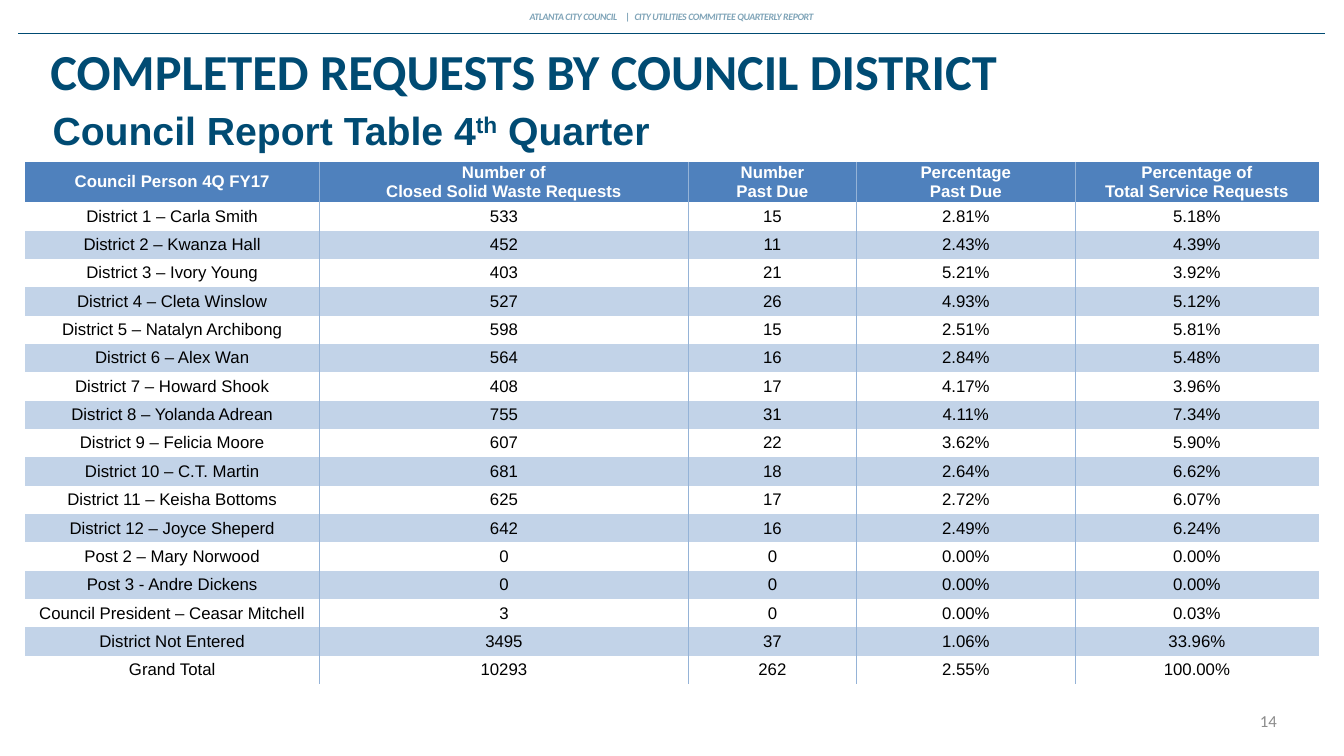
from lxml.etree import SubElement
from pptx import Presentation
from pptx.dml.color import RGBColor
from pptx.enum.shapes import MSO_CONNECTOR
from pptx.enum.text import MSO_ANCHOR, PP_ALIGN
from pptx.oxml.ns import qn
from pptx.util import Cm, Pt

# Content
TITLE = "COMPLETED REQUESTS BY COUNCIL DISTRICT"
SUBTITLE = [("Council Report Table 4", 0), ("th", 30000), (" Quarter", 0)]
# Running head: text and letter spacing in hundredths of a point
RUNNING_HEAD = [
    ("ATLANTA CITY COUNCIL", -25),
    (" ", 450),
    ("| ", 70),
    ("CITY UTILITIES COMMITTEE QUARTERLY REPORT", -25),
]
PAGE_NUMBER = "14"
HEADERS = [
    "Council Person 4Q FY17",
    "Number of\nClosed Solid Waste Requests",
    "Number\nPast Due",
    "Percentage\nPast Due",
    "Percentage of\nTotal Service Requests",
]
ROWS = [
    ("District 1 – Carla Smith", "533", "15", "2.81%", "5.18%"),
    ("District 2 – Kwanza Hall", "452", "11", "2.43%", "4.39%"),
    ("District 3 – Ivory Young", "403", "21", "5.21%", "3.92%"),
    ("District 4 – Cleta Winslow", "527", "26", "4.93%", "5.12%"),
    ("District 5 – Natalyn Archibong", "598", "15", "2.51%", "5.81%"),
    ("District 6 – Alex Wan", "564", "16", "2.84%", "5.48%"),
    ("District 7 – Howard Shook", "408", "17", "4.17%", "3.96%"),
    ("District 8 – Yolanda Adrean", "755", "31", "4.11%", "7.34%"),
    ("District 9 – Felicia Moore", "607", "22", "3.62%", "5.90%"),
    ("District 10 – C.T. Martin", "681", "18", "2.64%", "6.62%"),
    ("District 11 – Keisha Bottoms", "625", "17", "2.72%", "6.07%"),
    ("District 12 – Joyce Sheperd", "642", "16", "2.49%", "6.24%"),
    ("Post 2 – Mary Norwood", "0", "0", "0.00%", "0.00%"),
    ("Post 3 - Andre Dickens", "0", "0", "0.00%", "0.00%"),
    ("Council President – Ceasar Mitchell", "3", "0", "0.00%", "0.03%"),
    ("District Not Entered", "3495", "37", "1.06%", "33.96%"),
    ("Grand Total", "10293", "262", "2.55%", "100.00%"),
]

# Look
NAVY, HEAD_BLUE, BAND_BLUE, RULE_BLUE = "004B73", "4F81BD", "C2D3E8", "95B3D7"
PALE_NAVY, GREY, WHITE, BLACK = "7FA4B8", "8C8C8C", "FFFFFF", "000000"
COLUMN_WIDTHS = [Cm(7.42), Cm(9.3), Cm(4.23), Cm(5.52), Cm(6.13)]
HEADER_HEIGHT, BODY_HEIGHT = Cm(0.97), Cm(12.14)
PLAIN_TABLE_STYLE = "{2D5ABB26-0587-4C30-8999-92F81FD0307C}"


def colour(value):
    return RGBColor.from_string(value)


def style(para, font_name, size, ink, bold=False, italic=False, align=PP_ALIGN.LEFT):
    para.alignment = align
    para.space_before = Pt(0)
    font = para.font
    font.name, font.size = font_name, Pt(size)
    font.bold, font.italic = bold, italic
    font.color.rgb = colour(ink)


def place(shape, left, top, width, height):
    shape.left, shape.top = Cm(left), Cm(top)
    shape.width, shape.height = Cm(width), Cm(height)


def clear_margins(frame):
    frame.margin_left = frame.margin_right = 0
    frame.margin_top = frame.margin_bottom = 0


def add_spans(para, spans, attribute):
    for text, value in spans:
        span = para.add_run()
        span.text = text
        if value:
            span._r.get_or_add_rPr().set(attribute, str(value))


def add_label(page, left, top, width, height):
    box = page.shapes.add_textbox(Cm(left), Cm(top), Cm(width), Cm(height))
    box.text_frame.word_wrap = True
    clear_margins(box.text_frame)
    return box.text_frame


def add_border(cell, side):
    line = SubElement(cell._tc.get_or_add_tcPr(), qn(f"a:{side}"), w=str(Pt(0.5)))
    fill = SubElement(line, qn("a:solidFill"))
    SubElement(fill, qn("a:srgbClr"), val=RULE_BLUE)


def fill_cell(cell, text, row, column):
    cell.text = text
    clear_margins(cell)
    cell.vertical_anchor = MSO_ANCHOR.MIDDLE
    is_header = row == 0
    for para in cell.text_frame.paragraphs:
        style(para, "Arial", 12, WHITE if is_header else BLACK,
              bold=is_header, align=PP_ALIGN.CENTER)
    # Rules only between columns
    if column > 0:
        add_border(cell, "lnL")
    if column < len(HEADERS) - 1:
        add_border(cell, "lnR")
    if is_header or row % 2 == 0:
        cell.fill.solid()
        cell.fill.fore_color.rgb = colour(HEAD_BLUE if is_header else BAND_BLUE)
    else:
        cell.fill.background()


def add_running_head(page):
    para = add_label(page, 12.34, 0.28, 9.17, 0.66).paragraphs[0]
    add_spans(para, RUNNING_HEAD, "spc")
    style(para, "Calibri", 7, PALE_NAVY, True, True, PP_ALIGN.CENTER)
    rule = page.shapes.add_connector(
        MSO_CONNECTOR.STRAIGHT, Cm(0.46), Cm(0.84), Cm(33.4), Cm(0.84))
    rule.line.color.rgb = colour(NAVY)
    rule.line.width = Pt(0.75)
    SubElement(rule._element.spPr, qn("a:effectLst"))


def add_titles(page):
    title, subtitle = page.placeholders
    place(title, 0, 0.99, 33.87, 1.55)
    title.text_frame.text = TITLE
    clear_margins(title.text_frame)
    title.text_frame.margin_left = Cm(1.27)
    title.text_frame.vertical_anchor = MSO_ANCHOR.MIDDLE
    style(title.text_frame.paragraphs[0], "Calibri", 36, NAVY, bold=True)

    place(subtitle, 1.07, 2.54, 26.67, 1.3)
    subtitle.text_frame.vertical_anchor = MSO_ANCHOR.TOP
    para = subtitle.text_frame.paragraphs[0]
    add_spans(para, SUBTITLE, "baseline")
    style(para, "Arial", 28, NAVY, bold=True)


def add_request_table(page):
    frame = page.shapes.add_table(
        len(ROWS) + 1, len(HEADERS), Cm(0.63), Cm(4.08),
        sum(COLUMN_WIDTHS), HEADER_HEIGHT + BODY_HEIGHT)
    table = frame.table
    table._tbl.tblPr.find(qn("a:tableStyleId")).text = PLAIN_TABLE_STYLE
    for column, width in zip(table.columns, COLUMN_WIDTHS):
        column.width = width
    for row_index, values in enumerate([HEADERS, *ROWS]):
        height = BODY_HEIGHT // len(ROWS) if row_index else HEADER_HEIGHT
        table.rows[row_index].height = height
        for column_index, text in enumerate(values):
            fill_cell(table.cell(row_index, column_index), text, row_index, column_index)


def add_page_number(page):
    frame = add_label(page, 24.38, 17.91, 7.8, 0.51)
    frame.vertical_anchor = MSO_ANCHOR.MIDDLE
    frame.text = PAGE_NUMBER
    style(frame.paragraphs[0], "Calibri", 12, GREY, align=PP_ALIGN.RIGHT)


def main():
    deck = Presentation()
    deck.slide_width, deck.slide_height = Cm(33.87), Cm(19.05)
    page = deck.slides.add_slide(deck.slide_layouts.get_by_name("Section Header"))
    add_running_head(page)
    add_titles(page)
    add_request_table(page)
    add_page_number(page)
    deck.save("out.pptx")


if __name__ == "__main__":
    main()
